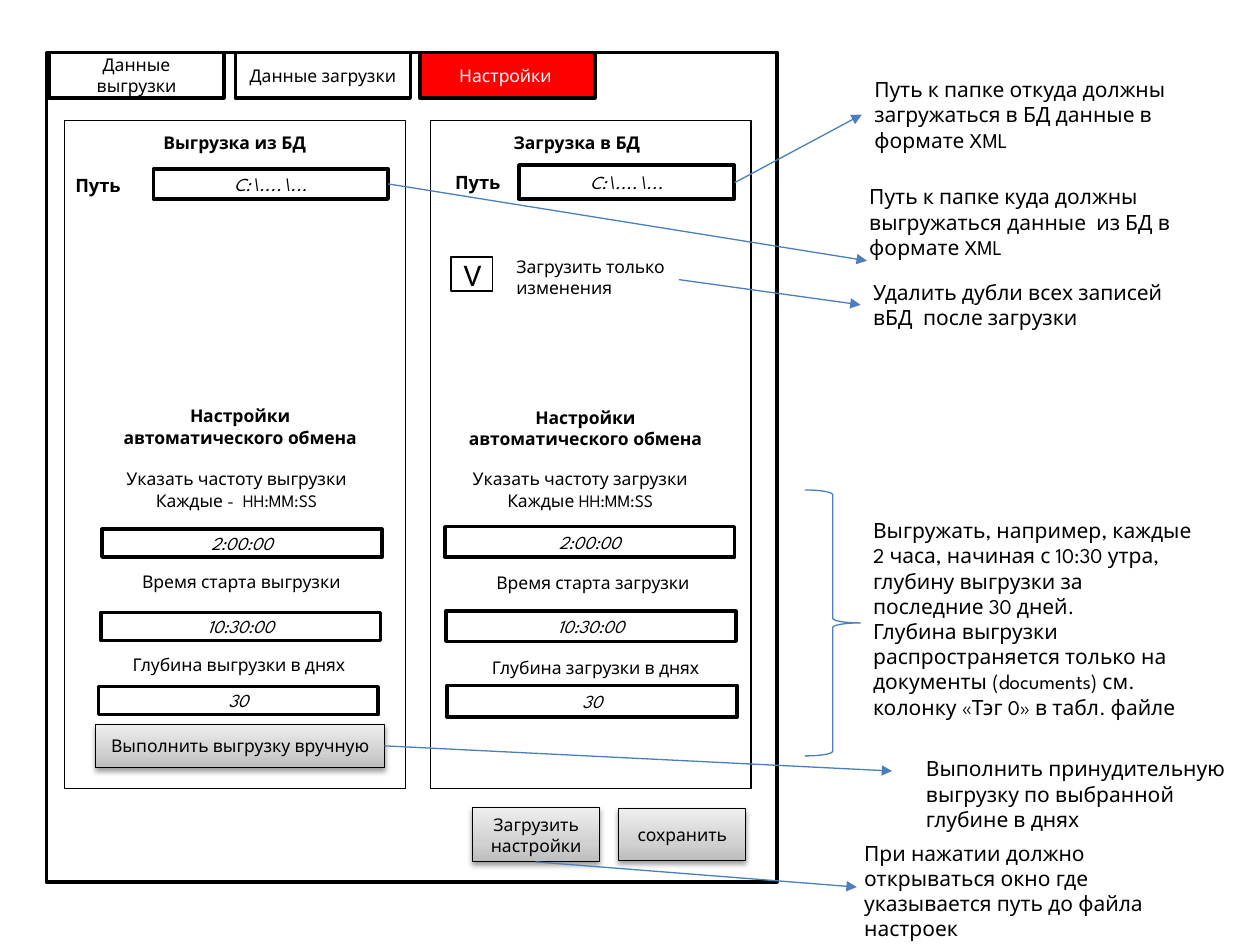
from dataclasses import dataclass

from lxml.etree import SubElement
from pptx import Presentation
from pptx.dml.color import RGBColor
from pptx.enum.shapes import MSO_CONNECTOR as CONN, MSO_SHAPE as SHAPE
from pptx.enum.text import MSO_ANCHOR as ANCHOR, MSO_AUTO_SIZE as AUTO, PP_ALIGN as ALIGN
from pptx.oxml import parse_xml
from pptx.oxml.ns import nsdecls, qn
from pptx.util import Pt

FONT = "League Spartan"
BLACK, WHITE, RED, BLUE = "000000", "FFFFFF", "FF0000", "4B7EBC"
GRADIENT = ((0, "BDBDBD"), (35, "D1D1D1"), (100, "EEEEEE"))


@dataclass
class Box:
    x: float
    y: float
    w: float
    h: float

    def lengths(self) -> tuple:
        return Pt(self.x), Pt(self.y), Pt(self.w), Pt(self.h)


@dataclass
class Label:
    text: str
    box: Box
    bold: bool = False
    size: float = 10


@dataclass
class Field:
    text: str
    box: Box


@dataclass
class Arrow:
    x1: float
    y1: float
    x2: float
    y2: float


def paint(color_format, color: str) -> None:
    color_format.rgb = RGBColor.from_string(color)


def write(tf, text: str, *, size=10, font=FONT, color=BLACK, bold=False,
          italic=False, align=ALIGN.CENTER) -> None:
    tf.word_wrap = True
    for i, line in enumerate(text.split("\n")):
        p = tf.paragraphs[0] if i == 0 else tf.add_paragraph()
        p.alignment = align
        r = p.add_run()
        r.text = line
        r.font.name, r.font.size = font, Pt(size)
        r.font.bold, r.font.italic = bold, italic
        paint(r.font.color, color)


def add_rect(box: Box, text="", *, fill=None, width=0.75, line=BLACK,
             kind=SHAPE.RECTANGLE, **fmt):
    sp = shapes.add_shape(kind, *box.lengths())
    sp.shadow.inherit = False
    if fill:
        sp.fill.solid()
        paint(sp.fill.fore_color, fill)
    else:
        sp.fill.background()
    paint(sp.line.color, line)
    sp.line.width = Pt(width)
    if text:
        sp.text_frame.vertical_anchor = ANCHOR.MIDDLE
        write(sp.text_frame, text, **fmt)
    return sp


def add_button(text: str, box: Box) -> None:
    pr = add_rect(box, text)._element.spPr
    stops = "".join(f'<a:gs pos="{pos * 1000}"><a:srgbClr val="{color}"/></a:gs>'
                    for pos, color in GRADIENT)
    gradient = parse_xml(f'<a:gradFill {nsdecls("a")}><a:gsLst>{stops}</a:gsLst>'
                         '<a:lin ang="16200000" scaled="0"/></a:gradFill>')
    pr.replace(pr.find(qn("a:noFill")), gradient)
    shadow = parse_xml(f'<a:effectLst {nsdecls("a")}><a:outerShdw blurRad="40000" '
                       'dist="20000" dir="5400000" rotWithShape="0"><a:srgbClr val="000000">'
                       '<a:alpha val="38000"/></a:srgbClr></a:outerShdw></a:effectLst>')
    pr.replace(pr.find(qn("a:effectLst")), shadow)


def add_text(text: str, box: Box, **fmt) -> None:
    tf = shapes.add_textbox(*box.lengths()).text_frame
    write(tf, text, **fmt)
    tf.auto_size = AUTO.SHAPE_TO_FIT_TEXT


def add_arrow(a: Arrow) -> None:
    c = shapes.add_connector(CONN.STRAIGHT, Pt(a.x1), Pt(a.y1), Pt(a.x2), Pt(a.y2))
    paint(c.line.color, BLUE)
    c.line.width = Pt(0.75)
    SubElement(c.line._get_or_add_ln(), qn("a:tailEnd"), type="triangle")
    SubElement(c._element.spPr, qn("a:effectLst"))


prs = Presentation()
prs.slide_width, prs.slide_height = Pt(720), Pt(540)
shapes = prs.slides.add_slide(prs.slide_layouts[6]).shapes

# Window and tabs
add_rect(Box(26.5, 30, 417.5, 474), fill=WHITE, width=2)
for x, text, fill, color in ((240, "Настройки ", RED, WHITE),
                             (134.5, "Данные загрузки", WHITE, BLACK),
                             (28, "Данные выгрузки", WHITE, BLACK)):
    add_rect(Box(x, 30, 100, 26), text, fill=fill, width=2, color=color)

# Export and import panels
for x, w in ((36.7, 195), (246.2, 183)):
    add_rect(Box(x, 69, w, 381.6))

AUTO_EXCHANGE = "Настройки автоматического обмена"
LABELS = (
    Label("Выгрузка из БД", Box(28, 72, 212, 19.4), True),
    Label("Путь", Box(28, 96, 56, 20), True, 10.5),
    Label(AUTO_EXCHANGE, Box(54.7, 228.2, 165, 31.7), True),
    Label("Указать частоту выгрузки Каждые -  HH:MM:SS", Box(52.6, 264.2, 165, 31.7)),
    Label("Время старта выгрузки", Box(55.4, 322.6, 165, 19.4)),
    Label("Глубина выгрузки в днях", Box(54, 370, 165, 19.4)),
    Label("Загрузка в БД", Box(214.6, 72, 230, 19.4), True),
    Label("Путь", Box(245, 94.3, 56, 20), True, 10.5),
    Label(AUTO_EXCHANGE, Box(252, 229, 165, 31.7), True),
    Label("Указать частоту загрузки Каждые HH:MM:SS", Box(249, 264.2, 165, 31.7)),
    Label("Время старта загрузки", Box(256.3, 323.3, 165, 19.4)),
    Label("Глубина загрузки в днях", Box(257.8, 372.2, 165, 19.4)),
)
for label in LABELS:
    add_text(label.text, label.box, size=label.size, bold=label.bold)

FOLDER, PERIOD, START, DEPTH = "C:\\....\\...", "2:00:00", "10:30:00", "30"
FIELDS = (
    Field(FOLDER, Box(87.8, 96.5, 134, 17.3)),
    Field(PERIOD, Box(58.3, 302.4, 160, 16)),
    Field(START, Box(57.6, 350, 160, 16)),
    Field(DEPTH, Box(56.2, 392.4, 160, 16)),
    Field(FOLDER, Box(296.6, 94.3, 123, 19.4)),
    Field(PERIOD, Box(254.2, 301, 165.6, 17.3)),
    Field(START, Box(254.9, 349.2, 165.6, 17.3)),
    Field(DEPTH, Box(255.6, 391.7, 165.6, 18)),
)
for field in FIELDS:
    add_rect(field.box, field.text, fill=WHITE, width=2, size=10.5, italic=True)

# Check box
add_rect(Box(257.8, 146.9, 23.8, 19.4), "V", size=18, font="Calibri")
add_text("Загрузить только изменения", Box(288, 142.6, 132.5, 31.7), align=ALIGN.LEFT)

# Buttons
add_button("Выполнить выгрузку вручную", Box(54.7, 414, 165, 24.5))
add_button("Загрузить настройки", Box(270, 461.5, 72.7, 31))
add_button("сохранить", Box(353.5, 462.2, 72.7, 29.5))

# Explanations on the right
NOTES = (
    ("Путь к папке откуда должны загружаться в БД данные в формате XML", 492.5, 40.3, 51),
    ("Путь к папке куда должны выгружаться данные  из БД в формате XML", 489.6, 101.5, 51),
    ("Удалить дубли всех записей вБД  после загрузки", 491.8, 156.2, 36),
    ("Выгружать, например, каждые 2 часа, начиная с 10:30 утра, глубину выгрузки за "
     "последние 30 дней.\nГлубина выгрузки распространяется только на документы "
     "(documents) см. колонку «Тэг 0» в табл. файле", 491.8, 292.3, 138.2),
    ("Выполнить принудительную выгрузку по выбранной глубине в днях", 522, 428.4, 51),
    ("При нажатии должно открываться окно где указывается путь до файла настроек",
     486.7, 476.6, 65.5),
)
for text, x, y, h in NOTES:
    add_text(text, Box(x, y, 198, h), size=12, align=ALIGN.LEFT)

# Brace and arrows
add_rect(Box(460, 280, 31.7, 152), kind=SHAPE.RIGHT_BRACE, line=BLUE)
for arrow in (Arrow(219.6, 426.2, 509.8, 440.6), Arrow(419.8, 104.4, 492.5, 65.5),
              Arrow(221.8, 105.1, 495.4, 149), Arrow(388, 159.8, 491.8, 174.2),
              Arrow(306, 492.5, 489.6, 506.9)):
    add_arrow(arrow)

prs.save("out.pptx")
